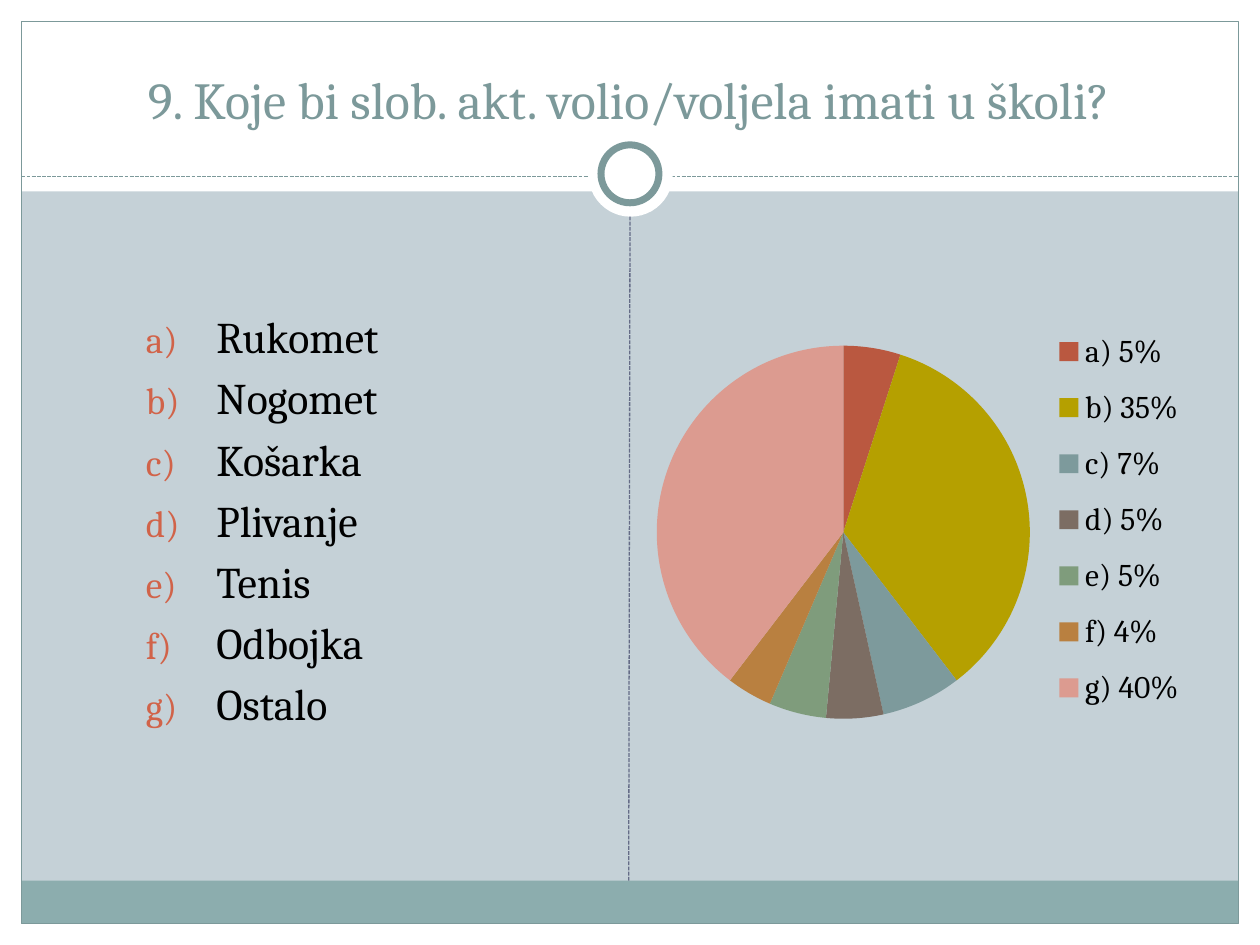
from lxml.etree import SubElement
from pptx import Presentation
from pptx.chart.data import CategoryChartData
from pptx.dml.color import RGBColor
from pptx.enum.chart import XL_CHART_TYPE as ChartType, XL_LEGEND_POSITION as LegendPosition
from pptx.enum.dml import MSO_LINE_DASH_STYLE as Dash
from pptx.enum.shapes import MSO_CONNECTOR as Connector, MSO_SHAPE as Shape
from pptx.enum.text import MSO_ANCHOR as Anchor, PP_ALIGN as Align
from pptx.oxml import parse_xml
from pptx.oxml.ns import nsdecls, qn
from pptx.util import Inches, Pt

WIDTH, HEIGHT, MARGIN = 10, 7.5, 0.17
FONT = "Cambria"
WHITE, TEAL, SEA, NAVY, RUST = "FFFFFF", "7C999A", "8CADAE", "646B86", "D16349"
ACTIVITIES = ["Rukomet", "Nogomet", "Košarka", "Plivanje", "Tenis", "Odbojka", "Ostalo"]
SHARES = [5, 35, 7, 5, 5, 4, 40]
SLICES = ["BA5840", "B5A000", "7D9A9C", "7C6D63", "7F9C7C", "B98040", "DC9B90"]


def color(value):
    return RGBColor.from_string(value)


def inches(*values):
    return [Inches(value) for value in values]


def add_block(slide, kind, box, fill=None, line=None, weight=0.75):
    shape = slide.shapes.add_shape(kind, *inches(*box))
    shape.shadow.inherit = False
    if fill:
        shape.fill.solid()
        shape.fill.fore_color.rgb = color(fill)
    else:
        shape.fill.background()
    if line:
        shape.line.color.rgb = color(line)
        shape.line.width = Pt(weight)
    else:
        shape.line.fill.background()


def add_dashed_line(slide, ends, line):
    connector = slide.shapes.add_connector(Connector.STRAIGHT, *inches(*ends))
    connector.line.color.rgb = color(line)
    connector.line.width = Pt(0.75)
    connector.line.dash_style = Dash.SQUARE_DOT
    SubElement(connector._element.spPr, qn("a:effectLst"))


def add_frame(slide):
    inner = WIDTH - 2 * MARGIN
    for box in [
        (0, HEIGHT - MARGIN, WIDTH, MARGIN),
        (0, 0, WIDTH, 1.52),
        (0, 0, MARGIN, HEIGHT),
        (WIDTH - MARGIN, 0, MARGIN, HEIGHT),
    ]:
        add_block(slide, Shape.RECTANGLE, box, WHITE)
    add_block(slide, Shape.RECTANGLE, (MARGIN, 6.99, inner, 0.34), SEA)
    add_block(slide, Shape.RECTANGLE, (MARGIN, MARGIN, inner, HEIGHT - 2 * MARGIN), line=TEAL)
    add_dashed_line(slide, (MARGIN, 1.4, WIDTH - MARGIN, 1.4), TEAL)
    add_block(slide, Shape.OVAL, (4.67, 1.05, 0.67, 0.67), WHITE)
    add_block(slide, Shape.OVAL, (4.77, 1.15, 0.46, 0.46), WHITE, TEAL, 4)
    add_dashed_line(slide, (4.99, 6.99, 5, 1.72), NAVY)


def style_font(font, size, value):
    font.name = FONT
    font.size = Pt(size)
    font.color.rgb = color(value)


def set_title(slide, text):
    title = slide.shapes.title
    title.left, title.top, title.width, title.height = inches(0.33, 0.25, 9.33, 0.83)
    frame = title.text_frame
    frame.text = text
    frame.vertical_anchor = Anchor.BOTTOM
    paragraph = frame.paragraphs[0]
    paragraph.alignment = Align.CENTER
    style_font(paragraph.font, 29.7, TEAL)
    slide.shapes._spTree.append(title._element)


def add_lettered_list(slide, box, items):
    frame = slide.shapes.add_textbox(*inches(*box)).text_frame
    frame.word_wrap = True
    frame.text = "\n".join(items)
    for paragraph in frame.paragraphs:
        style_font(paragraph.font, 25, "000000")
        paragraph.space_before = Pt(5)
        properties = paragraph._p.get_or_add_pPr()
        properties.set("marL", str(Inches(0.56)))
        properties.set("indent", str(-Inches(0.56)))
        bullet = [
            f'<a:buClr {nsdecls("a")}><a:srgbClr val="{RUST}"/></a:buClr>',
            f'<a:buSzPct {nsdecls("a")} val="85000"/>',
            f'<a:buAutoNum {nsdecls("a")} type="alphaLcParenR"/>',
        ]
        position = list(properties).index(properties.find(qn("a:defRPr")))
        for offset, xml in enumerate(bullet):
            properties.insert(position + offset, parse_xml(xml))


def make_layout(x, y, width, height, inner=False):
    target = '<c:layoutTarget val="inner"/>' if inner else ""
    return parse_xml(
        f'<c:layout {nsdecls("c")}><c:manualLayout>{target}'
        '<c:xMode val="edge"/><c:yMode val="edge"/>'
        f'<c:x val="{x}"/><c:y val="{y}"/><c:w val="{width}"/><c:h val="{height}"/>'
        "</c:manualLayout></c:layout>"
    )


def replace_layout(element, layout, position):
    for old in element.findall(qn("c:layout")):
        element.remove(old)
    element.insert(position, layout)


def add_pie(slide, box):
    data = CategoryChartData()
    data.categories = [f"{letter}) {share}%" for letter, share in zip("abcdefg", SHARES)]
    data.add_series("Series 1", SHARES)
    chart = slide.shapes.add_chart(ChartType.PIE, *inches(*box), data).chart
    chart.has_title = False
    style_font(chart.font, 18, "000000")
    chart.has_legend = True
    chart.legend.position = LegendPosition.RIGHT
    chart.legend.include_in_layout = False
    plot = chart.plots[0]
    plot.vary_by_categories = True
    for index, value in enumerate(SLICES):
        point = plot.series[0].points[index]
        point.format.fill.solid()
        point.format.fill.fore_color.rgb = color(value)
        point.format.line.fill.background()
    replace_layout(chart._chartSpace.chart.plotArea, make_layout(0.03, 0.2, 0.67, 0.6, True), 0)
    replace_layout(chart.legend._element, make_layout(0.73, 0.15, 0.26, 0.66), 1)


def main():
    presentation = Presentation()
    presentation.slide_width, presentation.slide_height = inches(WIDTH, HEIGHT)
    slide = presentation.slides.add_slide(presentation.slide_layouts[5])
    slide.background.fill.solid()
    slide.background.fill.fore_color.rgb = color("C5D1D7")
    add_frame(slide)
    set_title(slide, "9. Koje bi slob. akt. volio/voljela imati u školi?")
    add_lettered_list(slide, (1.06, 2.41, 3.68, 4.21), ACTIVITIES)
    add_pie(slide, (5.08, 1.75, 4.42, 4.95))
    presentation.save("out.pptx")


if __name__ == "__main__":
    main()
